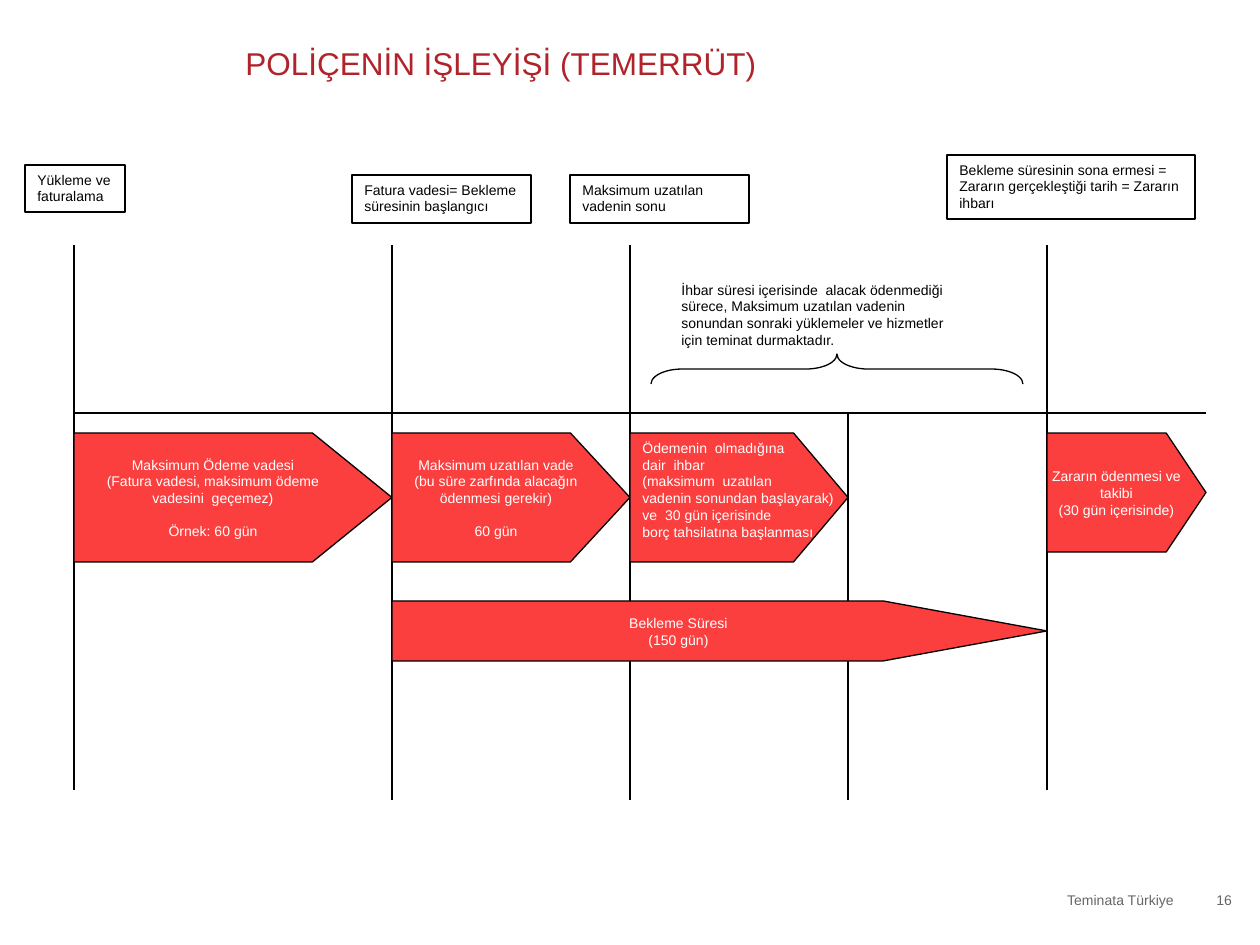
from dataclasses import dataclass

from lxml import etree
from pptx import Presentation
from pptx.dml.color import RGBColor
from pptx.enum.shapes import MSO_CONNECTOR, MSO_SHAPE
from pptx.enum.text import MSO_ANCHOR, PP_ALIGN
from pptx.oxml.ns import qn
from pptx.util import Emu, Pt

STRAIGHT = MSO_CONNECTOR.STRAIGHT
RECTANGLE = MSO_SHAPE.RECTANGLE
PENTAGON = MSO_SHAPE.PENTAGON
RIGHT_BRACE = MSO_SHAPE.RIGHT_BRACE
TOP, MIDDLE = MSO_ANCHOR.TOP, MSO_ANCHOR.MIDDLE
LEFT, CENTER, RIGHT = PP_ALIGN.LEFT, PP_ALIGN.CENTER, PP_ALIGN.RIGHT

PX_PER_INCH = 126
FONT = "Arial"
BODY_SIZE = 8
LINE_WIDTH = Pt(0.75)
GROUP_GAP = Pt(9)
COLORS = {
    "black": "000000",
    "white": "FFFFFF",
    "stage": "FB3F3F",
    "title": "B0232A",
    "footer": "666666",
}

SHIPMENT, DUE, EXTENDED, NOTICE, LOSS, END = 74, 392, 630, 848, 1047, 1206
LINE_TOP, AXIS_Y, STAGE_TOP = 245, 413, 433


@dataclass(frozen=True)
class Box:
    left: int
    top: int
    width: int
    height: int


@dataclass(frozen=True)
class Label:
    box: Box
    text: str


@dataclass(frozen=True)
class Line:
    x1: int
    y1: int
    x2: int
    y2: int


@dataclass(frozen=True)
class Stage:
    start: int
    end: int
    top: int
    height: int
    groups: tuple[tuple[str, ...], ...]
    align: PP_ALIGN = CENTER
    bottom_inset: int = 6


@dataclass(frozen=True)
class PlainText:
    box: Box
    text: str
    color: str = "black"
    size: int = BODY_SIZE
    align: PP_ALIGN = LEFT
    anchor: MSO_ANCHOR = TOP
    has_insets: bool = True


LINES = (
    Line(SHIPMENT, AXIS_Y, END, AXIS_Y),
    Line(SHIPMENT, LINE_TOP, SHIPMENT, 790),
    Line(DUE, LINE_TOP, DUE, 800),
    Line(EXTENDED, LINE_TOP, EXTENDED, 800),
    Line(NOTICE, AXIS_Y, NOTICE, 800),
    Line(LOSS, LINE_TOP, LOSS, 790),
)

LABELS = (
    Label(Box(25, 165, 100, 47), "Yükleme ve faturalama"),
    Label(Box(352, 175, 179, 48), "Fatura vadesi= Bekleme süresinin başlangıcı"),
    Label(Box(570, 175, 179, 48), "Maksimum uzatılan vadenin sonu"),
    Label(Box(947, 155, 248, 64),
          "Bekleme süresinin sona ermesi = Zararın gerçekleştiği tarih = Zararın ihbarı"),
)

STAGES = (
    Stage(SHIPMENT, DUE, STAGE_TOP, 129, (
        ("Maksimum Ödeme vadesi", "(Fatura vadesi, maksimum ödeme", "vadesini  geçemez)"),
        ("Örnek: 60 gün",),
    )),
    Stage(DUE, EXTENDED, STAGE_TOP, 129, (
        ("Maksimum uzatılan vade", "(bu süre zarfında alacağın", "ödenmesi gerekir)"),
        ("60 gün",),
    )),
    Stage(EXTENDED, NOTICE, STAGE_TOP, 129, (
        ("Ödemenin  olmadığına", "dair  ihbar", "(maksimum  uzatılan",
         "vadenin sonundan başlayarak)", "ve  30 gün içerisinde",
         "borç tahsilatına başlanması"),
    ), LEFT, 22),
    Stage(LOSS, END, STAGE_TOP, 119, (
        ("Zararın ödenmesi ve", "takibi", "(30 gün içerisinde)"),
    )),
    Stage(DUE, LOSS, 601, 60, (("Bekleme Süresi", "(150 gün)"),)),
)

TEXTS = (
    PlainText(Box(233, 38, 753, 50), "POLİÇENİN İŞLEYİŞİ (TEMERRÜT)", "title", 18),
    PlainText(Box(669, 275, 307, 80),
              "İhbar süresi içerisinde  alacak ödenmediği sürece, Maksimum uzatılan vadenin "
              "sonundan sonraki yüklemeler ve hizmetler  için teminat durmaktadır."),
    PlainText(Box(203, 890, 971, 20), "Teminata Türkiye", "footer",
              align=RIGHT, anchor=MIDDLE, has_insets=False),
    PlainText(Box(1188, 890, 44, 20), "16", "footer",
              align=RIGHT, anchor=MIDDLE, has_insets=False),
)

BRACE = Box(822, 183, 30, 372)


def px(value: int) -> Emu:
    return Emu(round(value * 914400 / PX_PER_INCH))


def color(name: str) -> RGBColor:
    return RGBColor.from_string(COLORS[name])


def place(box: Box) -> tuple[Emu, ...]:
    return px(box.left), px(box.top), px(box.width), px(box.height)


def write(frame, groups, color_name, size=BODY_SIZE, align=LEFT, anchor=TOP, wrap=True) -> None:
    frame.word_wrap = wrap
    frame.vertical_anchor = anchor
    paragraph = None
    for group in groups:
        for index, text in enumerate(group):
            is_first = paragraph is None
            paragraph = frame.paragraphs[0] if is_first else frame.add_paragraph()
            paragraph.text = text
            paragraph.alignment = align
            if index == 0 and not is_first:
                paragraph.space_before = GROUP_GAP
            paragraph.font.name = FONT
            paragraph.font.size = Pt(size)
            paragraph.font.color.rgb = color(color_name)


def add_outlined(slide, kind, box: Box, fill: str | None = None):
    shape = slide.shapes.add_shape(kind, *place(box))
    shape.shadow.inherit = False
    shape.line.color.rgb = color("black")
    shape.line.width = LINE_WIDTH
    if fill:
        shape.fill.solid()
        shape.fill.fore_color.rgb = color(fill)
    else:
        shape.fill.background()
    return shape


def add_line(slide, line: Line) -> None:
    connector = slide.shapes.add_connector(
        STRAIGHT, px(line.x1), px(line.y1), px(line.x2), px(line.y2))
    connector.line.color.rgb = color("black")
    connector.line.width = LINE_WIDTH
    etree.SubElement(connector._element.spPr, qn("a:effectLst"))


def add_label(slide, label: Label) -> None:
    shape = add_outlined(slide, RECTANGLE, label.box)
    write(shape.text_frame, ((label.text,),), "black")


def add_stage(slide, stage: Stage) -> None:
    width = stage.end - stage.start
    shape = add_outlined(
        slide, PENTAGON, Box(stage.start, stage.top, width, stage.height), "stage")
    shape.adjustments[0] = width / 4 / stage.height
    shape.text_frame.margin_bottom = px(stage.bottom_inset)
    write(shape.text_frame, stage.groups, "white", align=stage.align, anchor=MIDDLE, wrap=False)


def add_brace(slide, box: Box) -> None:
    shape = add_outlined(slide, RIGHT_BRACE, box)
    shape.adjustments[0] = 1.04
    shape.rotation = 270


def add_text(slide, item: PlainText) -> None:
    frame = slide.shapes.add_textbox(*place(item.box)).text_frame
    if not item.has_insets:
        frame.margin_left = frame.margin_right = frame.margin_top = frame.margin_bottom = 0
    write(frame, ((item.text,),), item.color, item.size, item.align, item.anchor)


def main() -> None:
    presentation = Presentation()
    presentation.slide_width, presentation.slide_height = px(1260), px(945)
    slide = presentation.slides.add_slide(presentation.slide_layouts[6])
    for items, draw in ((LINES, add_line), (LABELS, add_label), (STAGES, add_stage),
                        ((BRACE,), add_brace), (TEXTS, add_text)):
        for item in items:
            draw(slide, item)
    presentation.save("out.pptx")


if __name__ == "__main__":
    main()
